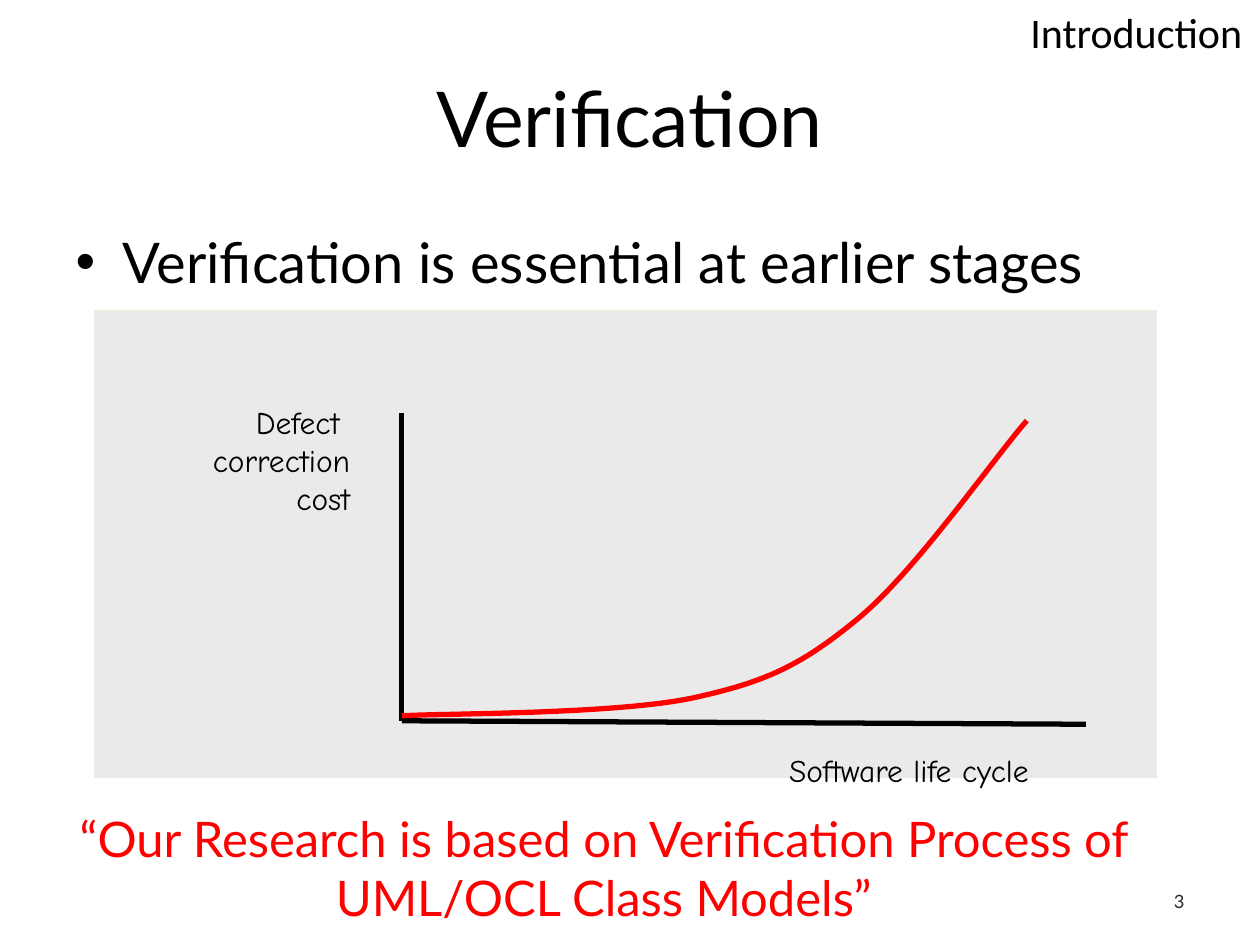
from lxml.etree import SubElement
from pptx import Presentation
from pptx.dml.color import RGBColor
from pptx.enum.shapes import MSO_CONNECTOR as CONN, MSO_SHAPE as SHAPE
from pptx.enum.text import MSO_ANCHOR as ANCHOR, MSO_AUTO_SIZE as AUTO, PP_ALIGN as ALIGN
from pptx.oxml.ns import qn
from pptx.util import Cm, Pt

BLACK = RGBColor(0x00, 0x00, 0x00)
RED = RGBColor(0xFF, 0x00, 0x00)
DARK = RGBColor(0x26, 0x26, 0x26)
PANEL = RGBColor(0xEA, 0xEA, 0xEA)
PANEL_EDGE = RGBColor(0xEE, 0xEC, 0xE1)
BODY_FONT = "Lato"
CHART_FONT = "Comic Neue"

ORIGIN = (8.1, 14.53)
COST_CURVE = [
    [(8.1, 14.43), (9.07, 14.38), (12.42, 14.4), (13.97, 14.07)],
    [(13.97, 14.07), (15.49, 13.74), (16.18, 13.39), (17.3, 12.47)],
    [(17.3, 12.47), (18.44, 11.53), (19.99, 9.3), (20.7, 8.48)],
]


def place(sp, left, top, width, height):
    """Move and size a shape, in centimetres."""
    sp.left, sp.top, sp.width, sp.height = Cm(left), Cm(top), Cm(width), Cm(height)


def write(sp, text, size=18, font=BODY_FONT, color=BLACK, align=ALIGN.LEFT,
          anchor=ANCHOR.TOP, auto=AUTO.NONE):
    """Fill a shape with one formatted paragraph."""
    tf = sp.text_frame
    tf.word_wrap = True
    tf.auto_size = auto
    tf.vertical_anchor = anchor
    p = tf.paragraphs[0]
    p.text = text
    p.alignment = align
    p.space_before = Pt(0)
    for r in p.runs:
        r.font.name = font
        r.font.size = Pt(size)
        r.font.color.rgb = color


def add_label(s, text, box, **fmt):
    """Add a text box holding formatted text."""
    sp = s.shapes.add_textbox(*map(Cm, box))
    write(sp, text, **fmt)


def add_panel(s, box):
    """Add the grey backdrop of the diagram."""
    sp = s.shapes.add_shape(SHAPE.RECTANGLE, *map(Cm, box))
    sp.shadow.inherit = False
    sp.fill.solid()
    sp.fill.fore_color.rgb = PANEL
    sp.line.color.rgb = PANEL_EDGE
    sp.line.width = Pt(0.75)


def add_axis(s, start, end):
    """Add a thick black axis line."""
    cx = s.shapes.add_connector(CONN.STRAIGHT, *map(Cm, start + end))
    cx.line.color.rgb = BLACK
    cx.line.width = Pt(3)
    SubElement(cx._element.spPr, qn("a:effectLst"))


def bezier(points, t):
    """Return the point at t on a cubic Bezier segment."""
    weights = ((1 - t) ** 3, 3 * t * (1 - t) ** 2, 3 * t * t * (1 - t), t ** 3)
    return tuple(Cm(sum(w * c for w, c in zip(weights, axis))) for axis in zip(*points))


def add_curve(s, segments, steps=24):
    """Add an open red outline through Bezier segments."""
    points = [bezier(seg, i / steps) for seg in segments for i in range(1, steps + 1)]
    builder = s.shapes.build_freeform(*bezier(segments[0], 0))
    builder.add_line_segments(points, close=False)
    sp = builder.convert_to_shape()
    sp.shadow.inherit = False
    sp.fill.background()
    sp.line.color.rgb = RED
    sp.line.width = Pt(3)


def main():
    """Build the verification slide."""
    prs = Presentation()
    prs.slide_width, prs.slide_height = Cm(25.4), Cm(19.05)
    s = prs.slides.add_slide(prs.slide_layouts[1])
    title, body = s.placeholders

    place(title, 1.27, 0.76, 22.86, 3.18)
    write(title, "Verification", size=44, align=ALIGN.CENTER, anchor=ANCHOR.MIDDLE)
    place(body, 1.27, 4.45, 22.86, 12.57)
    write(body, "Verification is essential at earlier stages", size=32)
    add_label(s, "3", (18.21, 17.65, 5.92, 1.02), size=10.5, color=DARK,
              align=ALIGN.RIGHT, anchor=ANCHOR.MIDDLE)

    add_panel(s, (1.9, 6.27, 21.41, 9.4))
    add_axis(s, (8.1, 8.33), ORIGIN)
    add_axis(s, ORIGIN, (21.89, 14.6))
    add_label(s, "Software life cycle", (13.92, 15.01, 8.81, 1.27), font=CHART_FONT,
              align=ALIGN.CENTER, auto=AUTO.SHAPE_TO_FIT_TEXT)
    add_label(s, "Defect \vcorrection\vcost", (2.31, 8, 5, 3.3), font=CHART_FONT,
              align=ALIGN.RIGHT, auto=AUTO.SHAPE_TO_FIT_TEXT)
    add_curve(s, COST_CURVE)

    add_label(s, "Introduction", (20.52, 0, 4.88, 1.27), size=24, font="Calibri",
              auto=AUTO.SHAPE_TO_FIT_TEXT)
    add_label(s, "“Our Research is based on Verification Process of UML/OCL Class Models”",
              (0.84, 16.18, 22.66, 2.64), size=28, color=RED, align=ALIGN.CENTER,
              auto=AUTO.SHAPE_TO_FIT_TEXT)
    prs.save("out.pptx")


if __name__ == "__main__":
    main()
